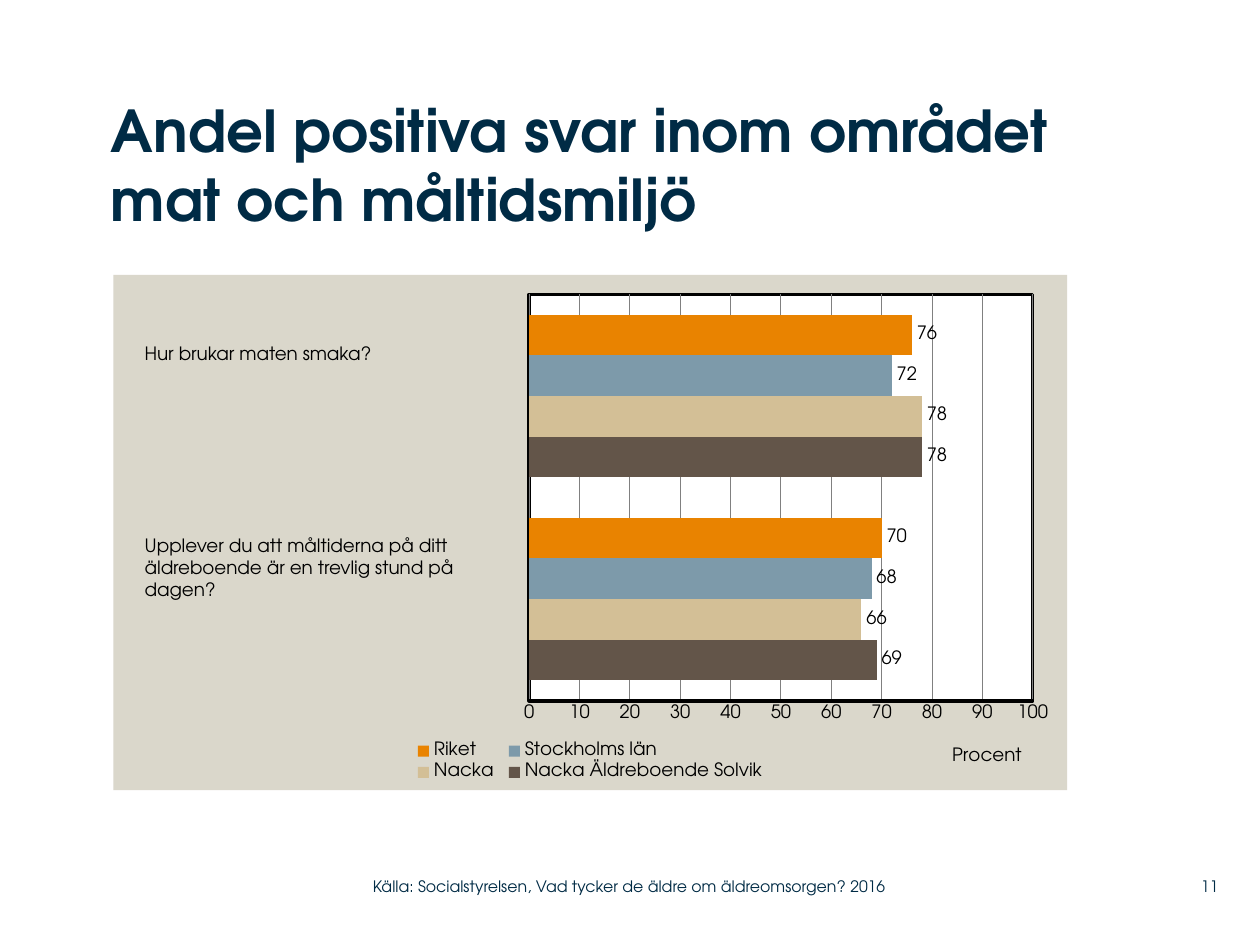
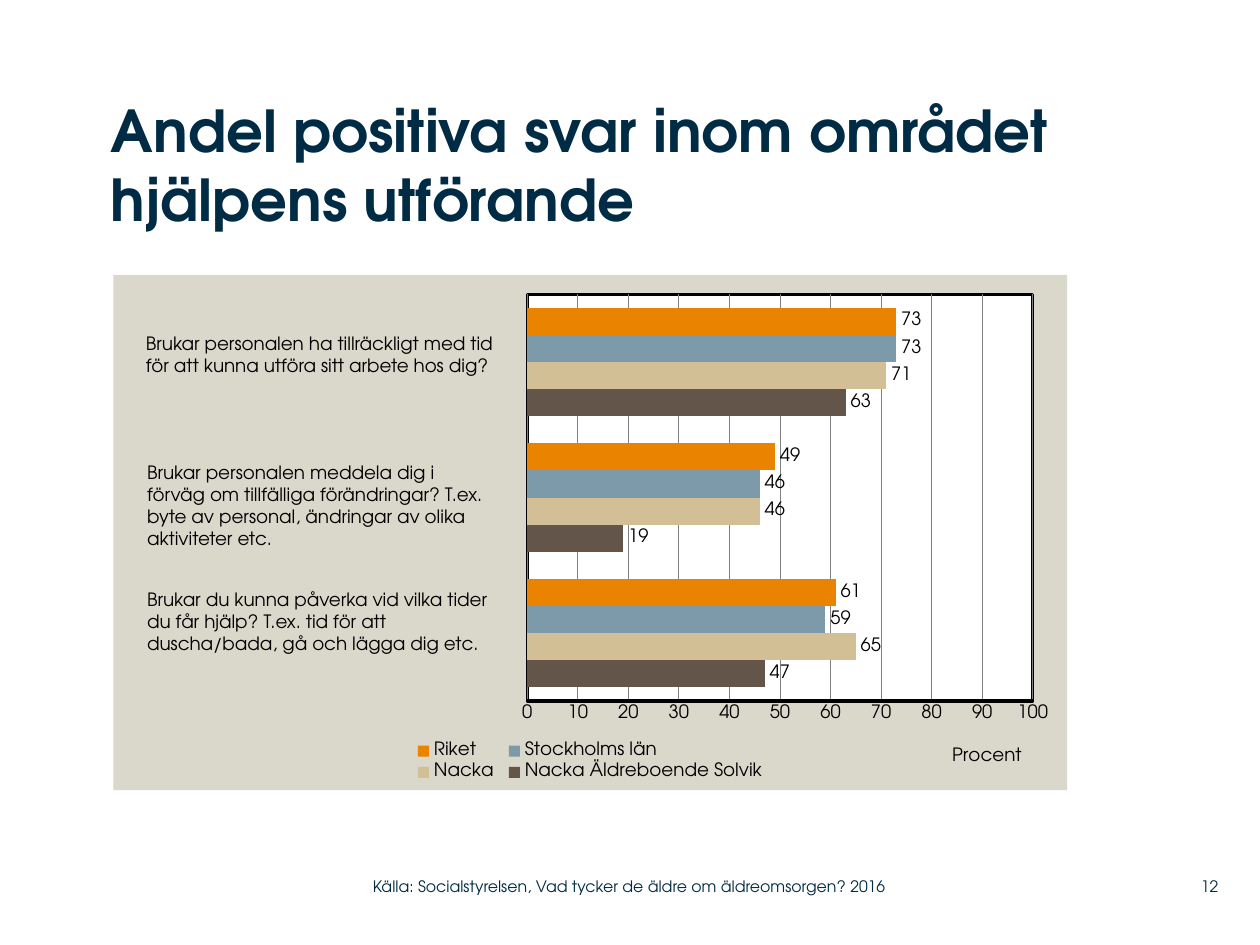
"""Builds two slides with bar charts of positive answers by area."""
from lxml import etree
from pptx import Presentation
from pptx.chart.data import CategoryChartData
from pptx.dml.color import RGBColor
from pptx.enum import chart as ch, text as tx
from pptx.oxml import parse_xml
from pptx.oxml.ns import nsdecls, qn
from pptx.util import Pt

FONT = "TeX Gyre Adventor"
NAVY, BLACK, SAND, WHITE, GREY = "002B45", "000000", "DAD7CB", "FFFFFF", "808080"
NAMES = ["Nacka Äldreboende Solvik", "Nacka", "Stockholms län", "Riket"]
HUES = ["635549", "D3BF96", "7D9AAA", "E98300"]
SOURCE = "Källa: Socialstyrelsen, Vad tycker de äldre om äldreomsorgen? 2016"

SLIDES = [
    dict(
        title="Andel positiva svar inom området mat och måltidsmiljö",
        wide=604.8, page="11", plot=(0.436, 0.038, 0.528, 0.789),
        vals=[(69, 78), (66, 78), (68, 72), (70, 76)],
        asks=[
            (75.6, 192.2, 213.8, 20.2, "Hur brukar maten smaka?"),
            (75.6, 301.7, 211, 45.4,
             "Upplever du att måltiderna på ditt äldreboende är en trevlig stund på\ndagen?"),
        ],
    ),
    dict(
        title="Andel positiva svar inom området hjälpens utförande",
        wide=547.2, page="12", plot=(0.434, 0.038, 0.53, 0.789),
        vals=[(47, 19, 63), (65, 46, 71), (59, 46, 73), (61, 49, 73)],
        asks=[
            (76.3, 186.5, 215.3, 32.4,
             "Brukar personalen ha tillräckligt med tid\nför att kunna utföra sitt arbete hos dig?"),
            (77, 259.9, 213.8, 58.3,
             "Brukar personalen meddela dig i förväg om tillfälliga förändringar? "
             "T.ex. byte av personal, ändringar av olika aktiviteter etc."),
            (77, 332.6, 213.8, 45.4,
             "Brukar du kunna påverka vid vilka tider\ndu får hjälp? T.ex. tid för att\n"
             "duscha/bada, gå och lägga dig etc."),
        ],
    ),
]


def write(shape, words, size, hue=BLACK, bold=False, align=tx.PP_ALIGN.LEFT,
          anchor=tx.MSO_ANCHOR.TOP, inset=True):
    frame = shape.text_frame
    frame.word_wrap = True
    frame.auto_size = tx.MSO_AUTO_SIZE.NONE
    frame.vertical_anchor = anchor
    if not inset:
        frame.margin_left = frame.margin_top = 0
        frame.margin_right = frame.margin_bottom = 0
    frame.text = words
    for para in frame.paragraphs:
        para.alignment = align
        para.font.name, para.font.size, para.font.bold = FONT, Pt(size), bold
        para.font.color.rgb = RGBColor.from_string(hue)


def place(part, spot, box, inner=False):
    for old in part.findall(qn("c:layout")):
        part.remove(old)
    lay = parse_xml(f"<c:layout {nsdecls('c')}><c:manualLayout/></c:layout>")
    tags = [("layoutTarget", "inner")] if inner else []
    tags += [("xMode", "edge"), ("yMode", "edge"), *zip("xywh", box)]
    for tag, val in tags:
        etree.SubElement(lay[0], qn("c:" + tag)).set("val", str(val))
    part.insert(spot, lay)


deck = Presentation()
deck.slide_width, deck.slide_height = Pt(720), Pt(540)

for page in SLIDES:
    slide = deck.slides.add_slide(deck.slide_layouts[5])

    data = CategoryChartData()
    data.categories = [str(i + 1) for i in range(len(page["asks"]))]
    for name, vals in zip(NAMES, page["vals"]):
        data.add_series(name, vals)
    chart = slide.shapes.add_chart(
        ch.XL_CHART_TYPE.BAR_CLUSTERED, Pt(64.8), Pt(157), Pt(545), Pt(294.5), data).chart
    chart.has_title = False
    chart.font.name, chart.font.size = FONT, Pt(10.5)
    chart.font.color.rgb = RGBColor.from_string(BLACK)

    bars = chart.plots[0]
    bars.gap_width, bars.overlap = 100, 0
    bars.vary_by_categories = False
    for row, hue in zip(bars.series, HUES):
        row.format.fill.solid()
        row.format.fill.fore_color.rgb = RGBColor.from_string(hue)
        row.data_labels.show_value = True
        row.data_labels.position = ch.XL_LABEL_POSITION.OUTSIDE_END

    chart.category_axis.visible = False
    axis = chart.value_axis
    axis.minimum_scale, axis.maximum_scale, axis.major_unit = 0, 100, 10
    axis.major_tick_mark = axis.minor_tick_mark = ch.XL_TICK_MARK.NONE
    for line, hue, width in ((axis.format.line, BLACK, 2),
                             (axis.major_gridlines.format.line, GREY, 0.5)):
        line.color.rgb = RGBColor.from_string(hue)
        line.width = Pt(width)
    write(axis.axis_title, "Procent", 10.5)

    chart.has_legend = True
    chart.legend.position = ch.XL_LEGEND_POSITION.BOTTOM
    chart.legend.include_in_layout = False

    root = chart.element
    area = root.find(".//" + qn("c:plotArea"))
    place(area, 0, page["plot"], inner=True)
    place(root.find(".//" + qn("c:legend")), 1, (0.31, 0.9, 0.38, 0.09))
    place(area.find(".//" + qn("c:title")), 1, (0.876, 0.909))
    edge = f'<a:ln w="{Pt(2)}"><a:solidFill><a:srgbClr val="{BLACK}"/></a:solidFill></a:ln>'
    back, front = [
        parse_xml(f'<c:spPr {nsdecls("c", "a")}><a:solidFill><a:srgbClr val="{hue}"/>'
                  f'</a:solidFill>{rim}</c:spPr>')
        for hue, rim in ((SAND, "<a:ln><a:noFill/></a:ln>"), (WHITE, edge))]
    root.find(qn("c:chart")).addnext(back)
    area.append(front)

    title = slide.shapes.title
    title.left, title.top, title.width, title.height = (
        Pt(63.4), Pt(54), Pt(page["wide"]), Pt(102.2))
    write(title, page["title"], 33, hue=NAVY, bold=True, inset=False)

    for *box, ask in page["asks"]:
        write(slide.shapes.add_textbox(*map(Pt, box)), ask, 10.5)

    for left, width, words, align in (
            (662.4, 33.8, page["page"], tx.PP_ALIGN.RIGHT),
            (213.1, 319, SOURCE, tx.PP_ALIGN.LEFT)):
        foot = slide.shapes.add_textbox(Pt(left), Pt(496), Pt(width), Pt(21))
        write(foot, words, 9, hue=NAVY, align=align,
              anchor=tx.MSO_ANCHOR.MIDDLE, inset=False)

deck.save("out.pptx")
